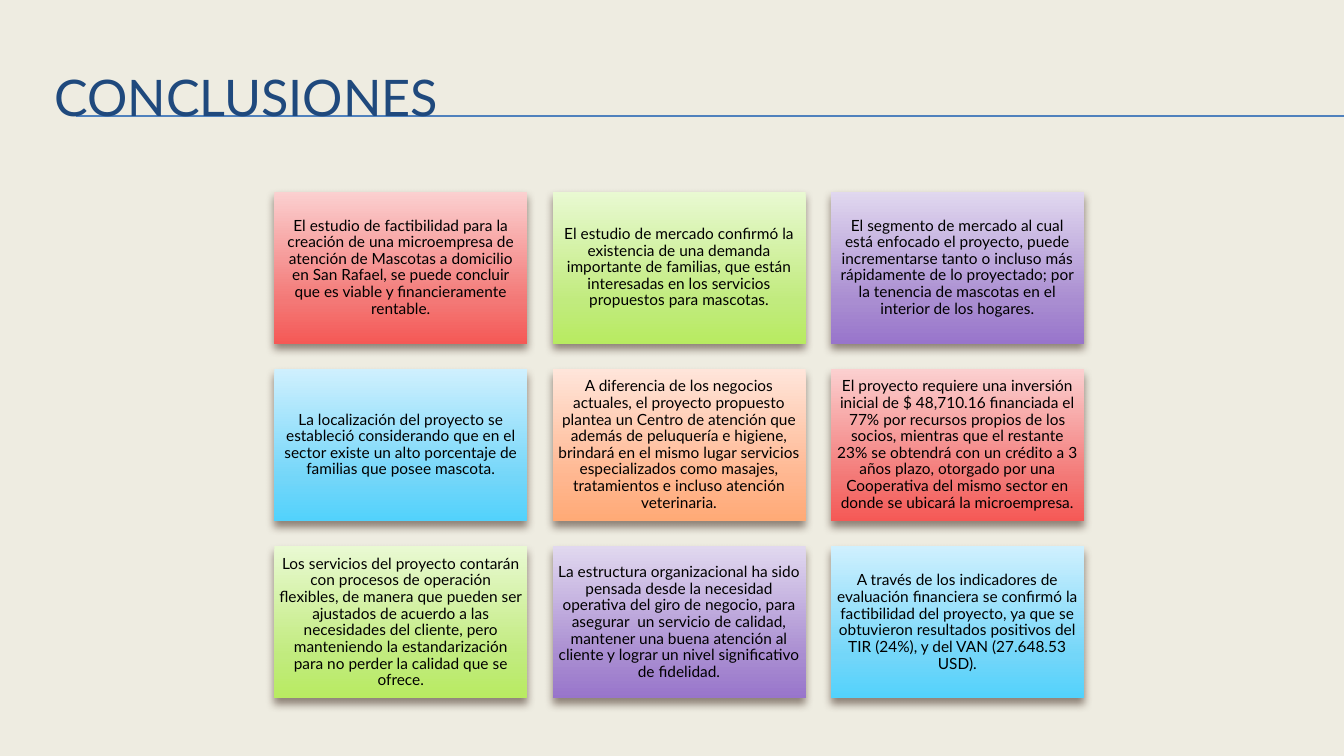
import copy

import pptx
import pptx.dml.color
import pptx.enum.shapes
import pptx.enum.text
import pptx.oxml
import pptx.oxml.ns
import pptx.util

COLORS = {
    "background": "EEECE1",
    "title": "1F497D",
    "rule": "4F81BD",
    "text": "000000",
    "shadow": "4E3B30",
}
GRADIENTS = {
    "red": ("FBD0D0", "F37876", "F55956"),
    "green": ("E9F9D2", "C1EB7E", "B8EB61"),
    "purple": ("E1D8EF", "A98DD1", "9875CB"),
    "blue": ("CFF0FE", "73D6F9", "52D2FC"),
    "orange": ("FFE5DA", "FFB68F", "FFAA76"),
}
STOP_POSITIONS = (0, 0.72, 1)
CONCLUSIONS = [
    ("red", "El estudio de factibilidad para la creación de una microempresa de atención de Mascotas "
            "a domicilio en San Rafael, se puede concluir que es viable y financieramente rentable."),
    ("green", "El estudio de mercado confirmó la existencia de una demanda importante de familias, "
              "que están interesadas en los servicios propuestos para mascotas."),
    ("purple", "El segmento de mercado al cual está enfocado el proyecto, puede incrementarse tanto o "
               "incluso más rápidamente de lo proyectado; por la tenencia de mascotas en el interior "
               "de los hogares."),
    ("blue", "La localización del proyecto se estableció considerando que en el sector existe un alto "
             "porcentaje de familias que posee mascota."),
    ("orange", "A diferencia de los negocios actuales, el proyecto propuesto plantea un Centro de "
               "atención que además de peluquería e higiene, brindará en el mismo lugar servicios "
               "especializados como masajes, tratamientos e incluso atención veterinaria."),
    ("red", "El proyecto requiere una inversión inicial de $ 48,710.16 financiada el 77% por recursos "
            "propios de los socios, mientras que el restante 23% se obtendrá con un crédito a 3 años "
            "plazo, otorgado por una Cooperativa del mismo sector en donde se ubicará la microempresa."),
    ("green", "Los servicios del proyecto contarán con procesos de operación flexibles, de manera que "
              "pueden ser ajustados de acuerdo a las necesidades del cliente, pero manteniendo la "
              "estandarización para no perder la calidad que se ofrece."),
    ("purple", "La estructura organizacional ha sido pensada desde la necesidad operativa del giro de "
               "negocio, para asegurar  un servicio de calidad, mantener una buena atención al cliente "
               "y lograr un nivel significativo de fidelidad."),
    ("blue", "A través de los indicadores de evaluación financiera se confirmó la factibilidad del "
             "proyecto, ya que se obtuvieron resultados positivos del TIR (24%), y del VAN "
             "(27.648.53 USD)."),
]


def rgb(value):
    return pptx.dml.color.RGBColor.from_string(value)


def write_text(shape, text, *, size, color, font="Lato", align="LEFT", inset=0.1, line_spacing=1.0,
               space_after=0):
    frame = shape.text_frame
    frame.word_wrap = True
    frame.vertical_anchor = pptx.enum.text.MSO_ANCHOR.MIDDLE
    frame.margin_left = frame.margin_right = pptx.util.Inches(inset)
    frame.margin_top = frame.margin_bottom = pptx.util.Inches(0.05)
    paragraph = frame.paragraphs[0]
    paragraph.alignment = getattr(pptx.enum.text.PP_ALIGN, align)
    paragraph.line_spacing = line_spacing
    paragraph.space_after = pptx.util.Pt(space_after)
    run = paragraph.add_run()
    run.text = text
    run.font.name = font
    run.font.size = pptx.util.Pt(size)
    run.font.color.rgb = rgb(color)


class ConclusionsSlide:
    """Draws the elements of the conclusions slide on a regular grid of cards."""

    columns = 3
    left, top = 2.72, 1.9
    card_width, card_height = 2.51, 1.51
    gap = 0.25

    def __init__(self, presentation):
        self.width = presentation.slide_width
        self.slide = presentation.slides.add_slide(presentation.slide_layouts[6])
        background = self.slide.background.fill
        background.solid()
        background.fore_color.rgb = rgb(COLORS["background"])

    def rule(self, left, height):
        y = pptx.util.Inches(height)
        line = self.slide.shapes.add_connector(
            pptx.enum.shapes.MSO_CONNECTOR.STRAIGHT, pptx.util.Inches(left), y, self.width, y)
        line.line.color.rgb = rgb(COLORS["rule"])
        line.line.width = pptx.util.Pt(0.75)
        line._element.spPr.append(pptx.oxml.parse_xml(
            f'<a:effectLst {pptx.oxml.ns.nsdecls("a")}/>'))

    def title(self, text):
        box = self.slide.shapes.add_textbox(*map(pptx.util.Inches, (0.44, 0.5, 12.67, 0.92)))
        write_text(box, text, size=36, color=COLORS["title"])

    def card(self, index, gradient, text):
        row, column = divmod(index, self.columns)
        bounds = (self.left + column * (self.card_width + self.gap),
                  self.top + row * (self.card_height + self.gap),
                  self.card_width, self.card_height)
        shape = self.slide.shapes.add_shape(
            pptx.enum.shapes.MSO_SHAPE.RECTANGLE, *map(pptx.util.Inches, bounds))
        shape.line.fill.background()
        self.shade(shape, GRADIENTS[gradient])
        self.drop_shadow(shape)
        write_text(shape, text, size=11, color=COLORS["text"], align="CENTER", inset=0.05,
                   line_spacing=0.9, space_after=4)

    def shade(self, shape, colors):
        shape.fill.gradient()
        shape.fill.gradient_angle = 270
        stop_list = shape._element.spPr.find(".//" + pptx.oxml.ns.qn("a:gsLst"))
        stop_list.append(copy.deepcopy(stop_list[0]))
        for stop, position, color in zip(shape.fill.gradient_stops, STOP_POSITIONS, colors):
            stop.position = position
            stop.color.rgb = rgb(color)

    def drop_shadow(self, shape):
        shape.shadow.inherit = False
        effects = shape._element.spPr.find(pptx.oxml.ns.qn("a:effectLst"))
        effects.append(pptx.oxml.parse_xml(
            f'<a:outerShdw {pptx.oxml.ns.nsdecls("a")} blurRad="{pptx.util.Pt(6)}" '
            f'dist="{pptx.util.Pt(4)}" dir="5400000" rotWithShape="0">'
            f'<a:srgbClr val="{COLORS["shadow"]}"><a:alpha val="60000"/></a:srgbClr>'
            '</a:outerShdw>'))


def main():
    presentation = pptx.Presentation()
    presentation.slide_width = pptx.util.Inches(13.33)
    presentation.slide_height = pptx.util.Inches(7.5)
    conclusions = ConclusionsSlide(presentation)
    for height in (1.15, 1.16):
        conclusions.rule(0.75, height)
    conclusions.title("CONCLUSIONES")
    for index, (gradient, text) in enumerate(CONCLUSIONS):
        conclusions.card(index, gradient, text)
    presentation.save("out.pptx")


if __name__ == "__main__":
    main()
